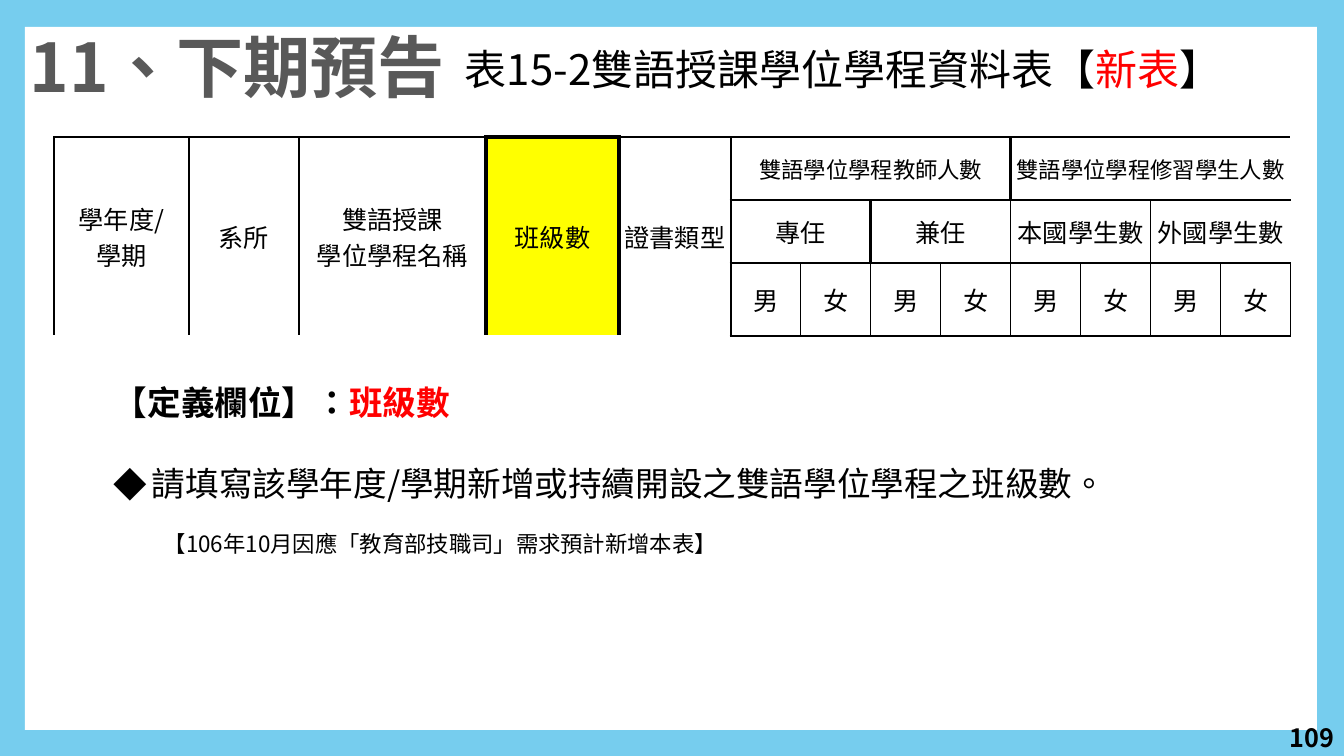
import lxml.etree
import pptx
import pptx.dml.color
import pptx.enum.shapes
import pptx.enum.text
import pptx.oxml.ns
import pptx.util

SCALE = 12192000 / 1344
FONT = "Noto Sans CJK SC"
COLORS = {
    "sky": "76CDEE",
    "white": "FFFFFF",
    "black": "000000",
    "gray": "595959",
    "red": "FF0000",
    "yellow": "FFFF00",
}
qn = pptx.oxml.ns.qn
align = pptx.enum.text.PP_ALIGN
anchor = pptx.enum.text.MSO_ANCHOR


def px(*lengths):
    return [pptx.util.Emu(round(length * SCALE)) for length in lengths]


def add_span(para, text, size, color="black", bold=False):
    span = para.add_run()
    span.text = text
    span.font.color.rgb = pptx.dml.color.RGBColor.from_string(COLORS[color])
    for name, value in {"size": pptx.util.Pt(size), "bold": bold, "name": FONT}.items():
        setattr(span.font, name, value)
    properties = span._r.get_or_add_rPr()
    properties.set("lang", "zh-TW")
    lxml.etree.SubElement(properties, qn("a:ea")).set("typeface", FONT)


deck = pptx.Presentation()
deck.slide_width, deck.slide_height = px(1344, 756)
slide = deck.slides.add_slide(deck.slide_layouts[6])
slide.background.fill.solid()
slide.background.fill.fore_color.rgb = pptx.dml.color.RGBColor.from_string(COLORS["sky"])

panel = slide.shapes.add_shape(
    pptx.enum.shapes.MSO_SHAPE.RECTANGLE, *px(25, 27, 1292, 703)
)
panel.shadow.inherit = False
panel.fill.solid()
panel.fill.fore_color.rgb = pptx.dml.color.RGBColor.from_string(COLORS["white"])
panel.line.fill.background()

column_widths = [135, 110, 187, 133, 112] + [70] * 8
row_heights = [63] * 3
header_cells = [
    (0, column, 3, 1, text, 18)
    for column, text in enumerate(
        ["學年度/\n學期", "系所", "雙語授課\n學位學程名稱", "班級數", "證書類型"]
    )
]
header_cells += [
    (0, 5 + 4 * index, 1, 4, text, 16)
    for index, text in enumerate(["雙語學位學程教師人數", "雙語學位學程修習學生人數"])
]
header_cells += [
    (1, 5 + 2 * index, 1, 2, text, 18)
    for index, text in enumerate(["專任", "兼任", "本國學生數", "外國學生數"])
]
header_cells += [(2, 5 + index, 1, 1, text, 18) for index, text in enumerate("男女" * 4)]

table = slide.shapes.add_table(
    3, 13, *px(54, 137, sum(column_widths), sum(row_heights))
).table
table.first_row = False
table.horz_banding = False
for column, width in zip(table.columns, px(*column_widths)):
    column.width = width
for row, height in zip(table.rows, px(*row_heights)):
    row.height = height

highlight_column = 3
edge_weights = {3: 3, 4: 3, 5: 2.25}
cell_format = {
    "margin_left": px(2)[0],
    "margin_right": px(2)[0],
    "margin_top": 0,
    "margin_bottom": 0,
    "vertical_anchor": anchor.MIDDLE,
}
for top, left, height, width, text, size in header_cells:
    bottom, right = top + height, left + width
    origin = table.cell(top, left)
    if height * width > 1:
        origin.merge(table.cell(bottom - 1, right - 1))
    for name, value in cell_format.items():
        setattr(origin, name, value)
    for index, line in enumerate(text.split("\n")):
        frame = origin.text_frame
        para = frame.add_paragraph() if index else frame.paragraphs[0]
        para.alignment = align.CENTER
        add_span(para, line, size)

    highlighted = left == highlight_column
    flat_weight = 3 if highlighted else 1
    for row in range(top, bottom):
        for column in range(left, right):
            cell = table.cell(row, column)
            cell.fill.solid()
            cell.fill.fore_color.rgb = pptx.dml.color.RGBColor.from_string(
                COLORS["yellow" if highlighted else "white"]
            )
            edges = [
                ("a:lnL", column == left, edge_weights.get(left, 1)),
                ("a:lnR", column == right - 1, edge_weights.get(right, 1)),
                ("a:lnT", row == top, flat_weight),
                ("a:lnB", row == bottom - 1, flat_weight),
            ]
            position = 0
            for tag, outer, weight in edges:
                if outer:
                    border = lxml.etree.Element(qn(tag), w=str(pptx.util.Pt(weight)))
                    fill = lxml.etree.SubElement(border, qn("a:solidFill"))
                    lxml.etree.SubElement(fill, qn("a:srgbClr"), val=COLORS["black"])
                    cell._tc.get_or_add_tcPr().insert(position, border)
                    position += 1

text_boxes = [
    ((1156, 717, 188, 40), anchor.MIDDLE, [
        ({"alignment": align.RIGHT}, 0, None, [("109", 18, "black", True)]),
    ]),
    ((20, 20, 469, 92), anchor.TOP, [
        ({}, 0, None, [("11、下期預告", 48, "gray", True)]),
    ]),
    ((455, 44, 835, 68), anchor.TOP, [
        ({"line_spacing": 0.9}, 0, None, [
            ("表15-2雙語授課學位學程資料表【", 30),
            ("新表", 30, "red"),
            ("】", 30),
        ]),
    ]),
    ((104, 337, 1205, 254), anchor.TOP, [
        ({"line_spacing": 2.0}, 0, None, [
            ("【定義欄位】：", 24, "black", True),
            ("班級數", 24, "red", True),
        ]),
        ({"line_spacing": 2.0}, 38, "◆", [
            ("請填寫該學年度/學期新增或持續開設之雙語學位學程之班級數。", 24),
        ]),
        ({"line_spacing": 2.0}, 50, None, [
            ("【106年10月因應「教育部技職司」需求預計新增本表】", 16),
        ]),
    ]),
]
for place, vertical_anchor, paragraphs in text_boxes:
    box = slide.shapes.add_textbox(*px(*place))
    frame = box.text_frame
    frame.word_wrap = True
    frame.vertical_anchor = vertical_anchor
    for index, (para_format, indent, bullet, spans) in enumerate(paragraphs):
        para = frame.add_paragraph() if index else frame.paragraphs[0]
        for name, value in para_format.items():
            setattr(para, name, value)
        properties = para._p.get_or_add_pPr()
        if indent:
            properties.set("marL", str(px(indent)[0]))
        if bullet:
            properties.set("indent", str(px(-indent)[0]))
            lxml.etree.SubElement(properties, qn("a:buFont")).set("typeface", FONT)
            lxml.etree.SubElement(properties, qn("a:buChar")).set("char", bullet)
        for span in spans:
            add_span(para, *span)

deck.save("out.pptx")
